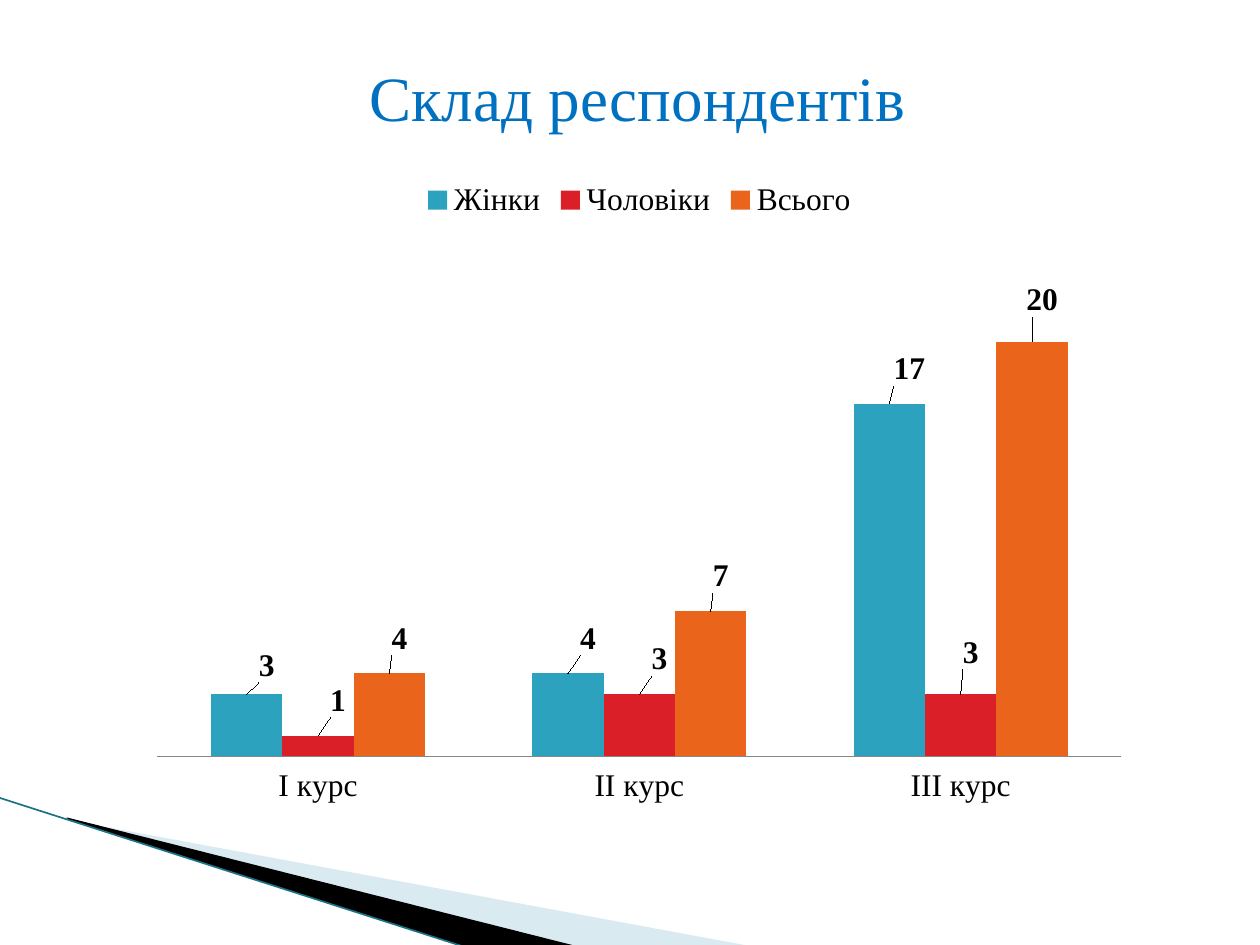
from typing import NamedTuple

from lxml.etree import SubElement
from pptx import Presentation
from pptx.chart.data import CategoryChartData as ChartData
from pptx.dml.color import RGBColor as Rgb
from pptx.enum.chart import XL_CHART_TYPE as Kind
from pptx.enum.chart import XL_LABEL_POSITION as Spot
from pptx.enum.chart import XL_LEGEND_POSITION as Side
from pptx.enum.chart import XL_TICK_LABEL_POSITION as Place
from pptx.enum.chart import XL_TICK_MARK as Tick
from pptx.enum.shapes import MSO_CONNECTOR as Link
from pptx.enum.text import PP_ALIGN as Align
from pptx.oxml import parse_xml
from pptx.oxml.ns import nsdecls, qn
from pptx.util import Inches, Pt

WIDE, HIGH = Inches(10), Inches(7.5)
FACE = "Times New Roman"
TEXT = {"name": FACE, "size": Pt(18), "bold": False}


class Wedge(NamedTuple):
    fill: str
    alpha: int  # percent
    dots: list  # percent of slide width and height


class Group(NamedTuple):
    name: str
    fill: str
    vals: tuple
    moves: tuple  # label shift, as shares of the chart


WEDGES = [
    Wedge("A0CBDC", 40, [(5.5, 86.8), (59.5, 100.1), (45.6, 100.1), (5.5, 86.7)]),
    Wedge("000000", 100, [(5.3, 86.5), (45.7, 100.1), (37.2, 100.3), (5.4, 86.7)]),
]
YEARS = ["І курс", "ІІ курс", "ІІІ курс"]
GROUPS = [
    Group("Жінки", "2DA2BF", (3, 4, 17), ((.02, -.01), (.02, -.02), (.02, -.02))),
    Group("Чоловіки", "DA1F28", (1, 3, 3), ((.02, -.02), (.02, -.02), (.01, -.03))),
    Group("Всього", "EB641B", (4, 7, 20), ((.01, -.02), (.01, -.02), (.01, -.03))),
]


def spot(x: float, y: float) -> tuple:
    """Turn percents of the slide into lengths."""
    return round(WIDE * x / 100), round(HIGH * y / 100)


def paint(fill, tint: str) -> None:
    fill.solid()
    fill.fore_color.rgb = Rgb.from_string(tint)


def style(font, form: dict, tint: str = "000000") -> None:
    for key, val in form.items():
        setattr(font, key, val)
    font.color.rgb = Rgb.from_string(tint)


def layout(**parts):
    """Build a manual chart layout from its child names and values."""
    node = parse_xml(f"<c:layout {nsdecls('c')}><c:manualLayout/></c:layout>")
    for key, val in parts.items():
        SubElement(node[0], qn(f"c:{key}")).set("val", str(val))
    return node


def draw_wedge(slide, wedge: Wedge) -> None:
    first, *rest = [spot(*dot) for dot in wedge.dots]
    pen = slide.shapes.build_freeform(*first)
    pen.add_line_segments(rest, close=True)
    shape = pen.convert_to_shape()
    shape.shadow.inherit = False
    paint(shape.fill, wedge.fill)
    shape.line.fill.background()
    tone = shape.fill._xPr.find(".//" + qn("a:srgbClr"))
    SubElement(tone, qn("a:alpha")).set("val", str(wedge.alpha * 1000))


def draw_edge(slide) -> None:
    line = slide.shapes.add_connector(
        Link.STRAIGHT, *spot(-.1, 84.4), *spot(37.1, 100.3))
    line.line.width = Pt(.95)
    paint(line.line.fill, "1B7388")
    SubElement(line._element.spPr, qn("a:effectLst"))


def draw_title(slide, text: str) -> None:
    frame = slide.shapes.add_textbox(*spot(6.2, 5.5), *spot(88.8, 10)).text_frame
    frame.word_wrap = True
    para = frame.paragraphs[0]
    para.text, para.alignment = text, Align.CENTER
    style(para.runs[0].font, {"name": FACE, "size": Pt(36)}, "0070C0")


def dress(series, group: Group) -> None:
    paint(series.format.fill, group.fill)
    series.invert_if_negative = False
    bold = TEXT | {"bold": True}
    labels = series.data_labels
    labels.show_value = True
    labels.position = Spot.OUTSIDE_END
    style(labels.font, bold)
    for num in range(len(YEARS)):
        label = series.points[num].data_label
        label.position = Spot.OUTSIDE_END
        style(label.font, bold)
    nodes = series._element.iter(qn("c:dLbl"))
    for node, (x, y) in zip(list(nodes), group.moves):
        node.find(qn("c:idx")).addnext(layout(x=x, y=y))


def draw_chart(slide) -> None:
    data = ChartData()
    data.categories = YEARS
    for group in GROUPS:
        data.add_series(group.name, group.vals)
    chart = slide.shapes.add_chart(
        Kind.COLUMN_CLUSTERED, *spot(10.9, 17.73), *spot(79.7, 67.73), data).chart
    style(chart.font, TEXT)
    chart.has_title = False
    chart.has_legend = True
    chart.legend.position = Side.TOP
    chart.legend.include_in_layout = False
    style(chart.legend.font, TEXT)

    base, scale = chart.category_axis, chart.value_axis
    base.major_tick_mark = Tick.NONE
    base.tick_label_position = Place.LOW
    style(base.tick_labels.font, TEXT)
    paint(base.format.line.fill, "868686")
    scale.minimum_scale, scale.maximum_scale = 0, 25
    scale.has_major_gridlines = False
    scale.visible = False

    plot = chart.plots[0]
    plot.gap_width, plot.overlap = 150, 0
    plot.vary_by_categories = False
    for series, group in zip(plot.series, GROUPS):
        dress(series, group)
    area = chart._chartSpace.find(".//" + qn("c:plotArea"))
    for old in area.findall(qn("c:layout")):
        area.remove(old)
    area.insert(0, layout(layoutTarget="inner", xMode="edge", yMode="edge",
                          x=.02, y=.11, w=.96, h=.81))


def main() -> None:
    deck = Presentation()
    deck.slide_width, deck.slide_height = WIDE, HIGH
    slide = deck.slides.add_slide(deck.slide_layouts[6])
    paint(slide.background.fill, "FFFFFF")
    for wedge in WEDGES:
        draw_wedge(slide, wedge)
    draw_edge(slide)
    draw_title(slide, "Склад респондентів")
    draw_chart(slide)
    deck.save("out.pptx")


if __name__ == "__main__":
    main()
